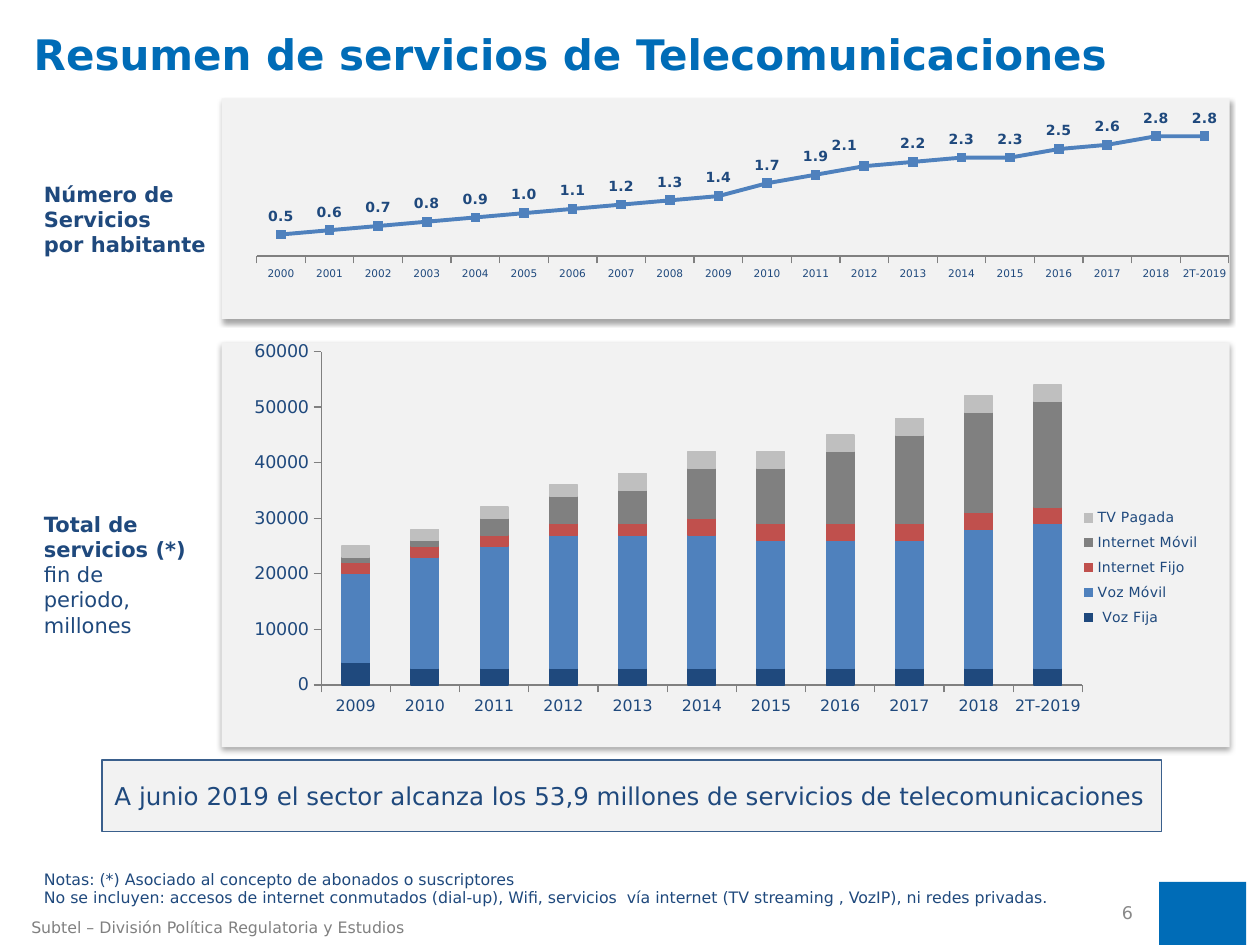
from dataclasses import dataclass

from lxml.etree import SubElement
from pptx import Presentation
from pptx.chart.data import CategoryChartData
from pptx.dml.color import RGBColor
from pptx.enum.chart import (XL_CHART_TYPE, XL_LABEL_POSITION, XL_LEGEND_POSITION,
                             XL_MARKER_STYLE, XL_TICK_MARK)
from pptx.enum.shapes import MSO_SHAPE
from pptx.enum.text import MSO_ANCHOR, PP_ALIGN
from pptx.oxml import parse_xml
from pptx.oxml.ns import nsdecls, qn
from pptx.util import Pt


@dataclass(frozen=True)
class Theme:
    font: str = "DejaVu Sans"
    brand: str = "006CB7"
    navy: str = "1F497D"
    blue: str = "4F81BD"
    red: str = "C0504D"
    gray: str = "808080"
    silver: str = "BFBFBF"
    panel: str = "F2F2F2"
    border: str = "3A5F8C"
    page_number: str = "898989"
    title_size: int = 24
    banner_size: int = 14
    label_size: int = 12
    axis_size: int = 10
    category_size: int = 9
    note_size: int = 9
    small_size: int = 8
    tiny_size: int = 6


THEME = Theme()

# Content
PANELS = [(126.7, 56.2, 576, 126), (126.7, 195.8, 576, 231.1)]

# box, lines of (text, bold), size, colour, alignment, anchor
LEFT, RIGHT = PP_ALIGN.LEFT, PP_ALIGN.RIGHT
TOP, MIDDLE = MSO_ANCHOR.TOP, MSO_ANCHOR.MIDDLE
TEXTS = [
    ((12.2, 12.2, 669, 36.7), [("Resumen de servicios de Telecomunicaciones", True)],
     THEME.title_size, THEME.brand, LEFT, MIDDLE),
    ((18, 100.1, 108, 51), [("Número de Servicios", True), ("por habitante", True)],
     THEME.label_size, THEME.navy, LEFT, TOP),
    ((18, 288.7, 100.8, 80),
     [("Total de servicios (*)", True), ("fin de periodo,", False), ("millones", False)],
     THEME.label_size, THEME.navy, LEFT, TOP),
    ((18, 493.2, 616.3, 44),
     [("Notas: (*) Asociado al concepto de abonados o suscriptores", False),
      ("No se incluyen: accesos de internet conmutados (dial-up), Wifi, servicios  vía "
       "internet (TV streaming , VozIP), ni redes privadas.", False)],
     THEME.note_size, THEME.navy, LEFT, TOP),
    ((10.8, 520.6, 383.8, 18), [("Subtel – División Política Regulatoria y Estudios", False)],
     THEME.note_size, THEME.gray, LEFT, TOP),
    ((486.7, 514.1, 167.8, 15.1), [("6", False)],
     THEME.axis_size, THEME.page_number, RIGHT, MIDDLE),
]
BANNER = "A junio 2019 el sector alcanza los 53,9 millones de servicios de telecomunicaciones"

LAST_PERIOD = "2T-2019"
PER_CAPITA = [0.5, 0.6, 0.7, 0.8, 0.9, 1.0, 1.1, 1.2, 1.3, 1.4,
              1.7, 1.9, 2.1, 2.2, 2.3, 2.3, 2.5, 2.6, 2.8, 2.8]
SHIFTED_LABEL = 12
SERVICES = [
    (" Voz Fija", THEME.navy, [4000] + [3000] * 10),
    ("Voz Móvil", THEME.blue, [16000, 20000, 22000, 24000, 24000, 24000,
                               23000, 23000, 23000, 25000, 26000]),
    ("Internet Fijo", THEME.red, [2000] * 5 + [3000] * 6),
    ("Internet Móvil", THEME.gray, [1000, 1000, 3000, 5000, 6000, 9000,
                                    10000, 13000, 16000, 18000, 19000]),
    ("TV Pagada", THEME.silver, [2000] * 4 + [3000] * 7),
]


def color(value):
    return RGBColor.from_string(value)


def set_font(font, size, value=THEME.navy, bold=False):
    font.name, font.size, font.bold = THEME.font, Pt(size), bold
    font.color.rgb = color(value)


def points(box):
    return [Pt(length) for length in box]


def add_rectangle(page, box, fill, line=None):
    shape = page.shapes.add_shape(MSO_SHAPE.RECTANGLE, *points(box))
    shape.shadow.inherit = False
    shape.fill.solid()
    shape.fill.fore_color.rgb = color(fill)
    if line:
        shape.line.color.rgb = color(line)
        shape.line.width = Pt(1)
    else:
        shape.line.fill.background()
    return shape


def add_shadow(shape):
    effects = shape._element.spPr.find(qn("a:effectLst"))
    effects.append(parse_xml(
        f'<a:outerShdw {nsdecls("a")} blurRad="{Pt(3.1)}" dist="{Pt(1.8)}" dir="5400000" '
        'rotWithShape="0"><a:srgbClr val="000000"><a:alpha val="35000"/></a:srgbClr>'
        '</a:outerShdw>'))


def add_text(page, bounds, lines, size, value, align, anchor):
    frame = page.shapes.add_textbox(*points(bounds)).text_frame
    frame.word_wrap = True
    frame.vertical_anchor = anchor
    for index, (text, bold) in enumerate(lines):
        para = frame.paragraphs[0] if index == 0 else frame.add_paragraph()
        para.text, para.alignment = text, align
        set_font(para.font, size, value, bold)


def manual_layout(**settings):
    layout = parse_xml(f'<c:layout {nsdecls("c")}><c:manualLayout/></c:layout>')
    for name, value in settings.items():
        SubElement(layout[0], qn(f"c:{name}")).set("val", str(value))
    return layout


def place_part(parent, x, y, w, h, **target):
    """Fix the position of a chart part, as fractions of the chart."""
    for old in parent.findall(qn("c:layout")):
        parent.remove(old)
    layout = manual_layout(**target, xMode="edge", yMode="edge", x=x, y=y, w=w, h=h)
    before = parent.find(qn("c:legendPos"))
    if before is None:
        parent.insert(0, layout)
    else:
        before.addnext(layout)


def add_chart(page, kind, box, categories, series, plot_box, size, category_size):
    data = CategoryChartData()
    data.categories = categories
    for name, _, values in series:
        data.add_series(name, values)
    chart = page.shapes.add_chart(kind, *points(box), data).chart
    set_font(chart.font, size)
    chart.has_title = chart.has_legend = False
    chart.value_axis.has_major_gridlines = False
    for axis in (chart.category_axis, chart.value_axis):
        axis.major_tick_mark = XL_TICK_MARK.OUTSIDE
        axis.format.line.color.rgb = color(THEME.gray)
    set_font(chart.category_axis.tick_labels.font, category_size)
    chart.plots[0].vary_by_categories = False
    # Clear backgrounds let the panel show through
    clear = f'<c:spPr {nsdecls("c", "a")}><a:noFill/><a:ln><a:noFill/></a:ln></c:spPr>'
    root = chart._chartSpace
    root.find(qn("c:txPr")).addprevious(parse_xml(clear))
    plot_area = root.chart.plotArea
    plot_area.append(parse_xml(clear))
    place_part(plot_area, *plot_box, layoutTarget="inner")
    return chart


def add_per_capita_chart(page):
    categories = [str(year) for year in range(2000, 2019)] + [LAST_PERIOD]
    chart = add_chart(page, XL_CHART_TYPE.LINE_MARKERS, (131.8, 59.8, 571, 139), categories,
                      [("Servicios por habitante", THEME.blue, PER_CAPITA)],
                      (0.026, 0.095, 0.973, 0.527), THEME.small_size, THEME.tiny_size)
    axis = chart.value_axis
    axis.minimum_scale, axis.maximum_scale, axis.visible = 0, 3, False
    line = chart.plots[0].series[0]
    line.smooth = False
    line.format.line.color.rgb = color(THEME.blue)
    line.format.line.width = Pt(2.25)
    line.marker.style, line.marker.size = XL_MARKER_STYLE.SQUARE, 5
    line.marker.format.fill.solid()
    line.marker.format.fill.fore_color.rgb = color(THEME.blue)
    line.marker.format.line.color.rgb = color(THEME.blue)
    labels = line.data_labels
    labels.show_value, labels.position = True, XL_LABEL_POSITION.ABOVE
    labels.number_format, labels.number_format_is_linked = "#,##0.0", False
    set_font(labels.font, THEME.small_size, bold=True)
    # One label moves left of its point
    label = line.points[SHIFTED_LABEL].data_label
    set_font(label.font, THEME.small_size, bold=True)
    label.position = XL_LABEL_POSITION.ABOVE
    index = line._element.find(".//" + qn("c:dLbl")).find(qn("c:idx"))
    index.addnext(manual_layout(x=-0.02, y=-0.01))
    index.getnext().addnext(parse_xml(
        f'<c:numFmt {nsdecls("c")} formatCode="#,##0.0" sourceLinked="0"/>'))


def add_services_chart(page):
    categories = [str(year) for year in range(2009, 2019)] + [LAST_PERIOD]
    chart = add_chart(page, XL_CHART_TYPE.COLUMN_STACKED, (126.7, 185.8, 568, 252), categories,
                      SERVICES, (0.1, 0.06, 0.766, 0.756), THEME.axis_size, THEME.category_size)
    plot = chart.plots[0]
    plot.gap_width, plot.overlap = 150, 100
    for series, (_, value, _) in zip(plot.series, SERVICES):
        series.format.fill.solid()
        series.format.fill.fore_color.rgb = color(value)
        series.format.line.color.rgb = color(value)
        series.format.line.width = Pt(0.75)
    chart.value_axis.maximum_scale, chart.value_axis.major_unit = 60000, 10000
    chart.has_legend = True
    chart.legend.position = XL_LEGEND_POSITION.RIGHT
    chart.legend.include_in_layout = False
    set_font(chart.legend.font, THEME.small_size)
    place_part(chart.legend._element, 0.86, 0.4, 0.13, 0.3)


def main():
    deck = Presentation()
    deck.slide_width, deck.slide_height = Pt(720), Pt(540)
    page = deck.slides.add_slide(deck.slide_layouts[6])
    # Emblem block, then panels with charts
    add_rectangle(page, (662.4, 504, 49.7, 36), THEME.brand)
    for box in PANELS:
        add_shadow(add_rectangle(page, box, THEME.panel))
    add_per_capita_chart(page)
    add_services_chart(page)
    for text in TEXTS:
        add_text(page, *text)
    # Conclusion banner
    banner = add_rectangle(page, (58.3, 434.2, 605.5, 41), THEME.panel, THEME.border)
    banner.text_frame.word_wrap = True
    para = banner.text_frame.paragraphs[0]
    para.text, para.alignment, para.space_after = BANNER, PP_ALIGN.JUSTIFY, Pt(4)
    set_font(para.font, THEME.banner_size)
    deck.save("out.pptx")


if __name__ == "__main__":
    main()
